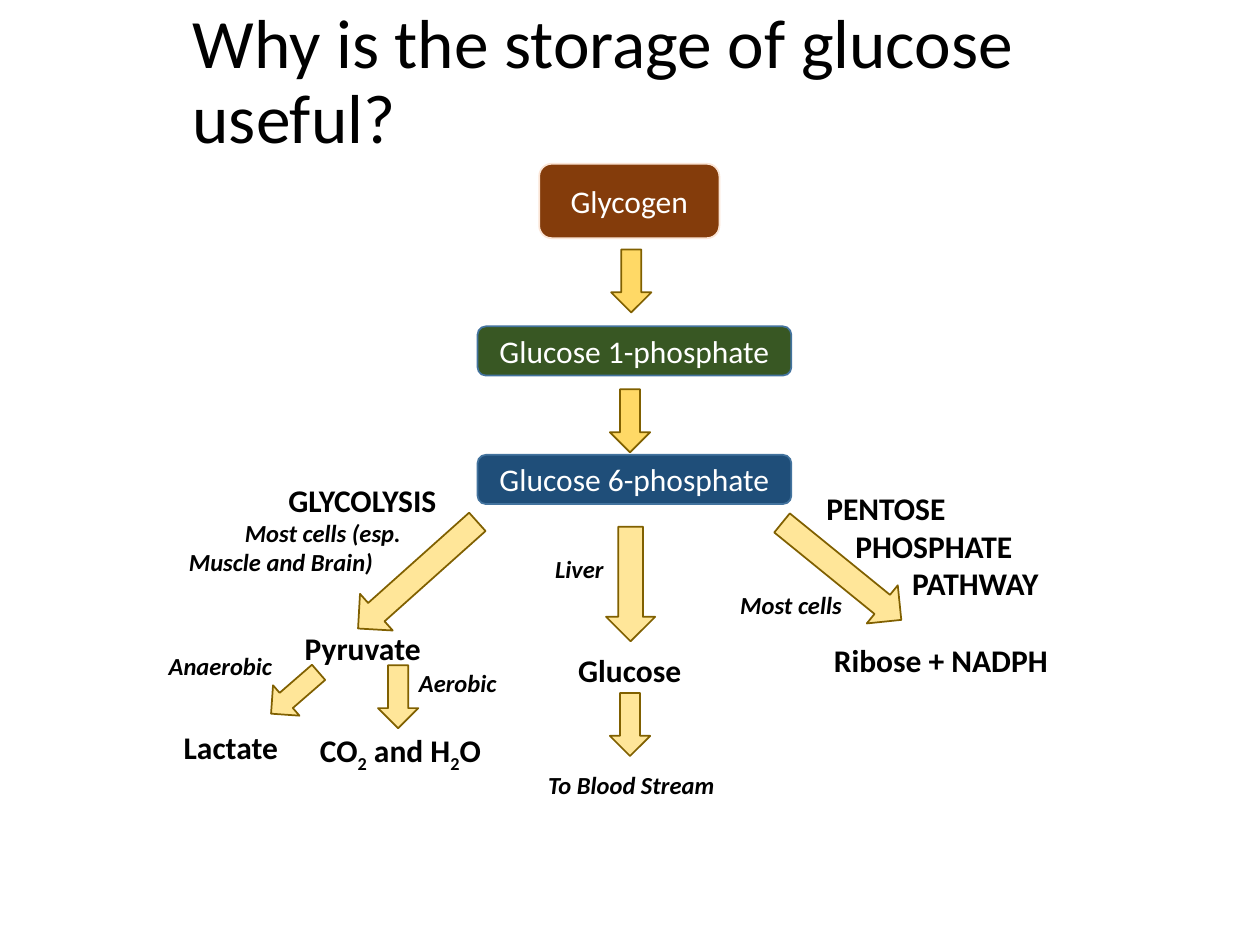
from pptx import Presentation
from pptx.dml.color import RGBColor
from pptx.enum.shapes import MSO_SHAPE
from pptx.enum.text import MSO_ANCHOR, MSO_AUTO_SIZE, PP_ALIGN
from pptx.util import Inches, Pt

COLORS = {
    "black": "000000", "white": "FFFFFF",
    "brown": "843C0B", "peach": "FBE5D6",
    "green": "385723", "navy": "1F4E79", "steel": "43739E",
    "gold": "FFD966", "light gold": "FFE699", "olive": "806000",
}
TITLE = {"name": "Calibri", "size": Pt(39.6)}
BOX = {"name": "Calibri", "size": Pt(18)}
MOLECULE = {"name": "Calibri", "size": Pt(18), "bold": True}
CONDITION = {"name": "Calibri", "size": Pt(14), "bold": True, "italic": True}

# text, left, top, width, height, fill, line
BOXES = [
    ("Glycogen", 4.28, 1.3, 1.43, 0.59, "brown", "peach"),
    ("Glucose 1-phosphate", 3.79, 2.59, 2.49, 0.39, "green", "steel"),
    ("Glucose 6-phosphate", 3.79, 3.61, 2.49, 0.39, "navy", "steel"),
]
# left, top, length, thickness, rotation, fill
ARROWS = [
    (4.76, 2.07, 0.5, 0.32, 270, "gold"),
    (4.75, 3.18, 0.5, 0.32, 270, "gold"),
    (2.68, 4.37, 1.27, 0.39, 318.2, "light gold"),
    (4.55, 4.44, 0.91, 0.39, 270, "light gold"),
    (6.07, 4.34, 1.22, 0.39, 219.1, "light gold"),
    (2.09, 5.34, 0.5, 0.32, 319, "light gold"),
    (2.91, 5.37, 0.5, 0.32, 270, "light gold"),
    (4.75, 5.59, 0.5, 0.32, 270, "light gold"),
]
# text, left, top, width
MOLECULES = [
    ("GLYCOLYSIS", 2.19, 3.77, 1.39),
    ("Pyruvate", 2.32, 4.94, 1.13),
    ("Lactate", 1.36, 5.73, 0.96),
    ("Ribose + NADPH", 6.52, 5.04, 1.92),
    ("Glucose", 4.49, 5.12, 1.02),
]
CONDITIONS = [
    ("Liver", 4.3, 4.35, 0.59),
    ("Aerobic", 3.22, 5.25, 0.82),
    ("Anaerobic", 1.23, 5.12, 1.03),
    ("Most cells", 5.76, 4.63, 1.02),
    ("To Blood Stream", 4.24, 6.06, 1.53),
]


def color(name):
    return RGBColor.from_string(COLORS[name])


def add_run(paragraph, text, style, color_name="black"):
    run = paragraph.add_run()
    run.text = text
    for attribute, value in style.items():
        setattr(run.font, attribute, value)
    run.font.color.rgb = color(color_name)
    return run


def add_shape(slide, kind, bounds, fill, line):
    shape = slide.shapes.add_shape(kind, *map(Inches, bounds))
    shape.shadow.inherit = False
    shape.fill.solid()
    shape.fill.fore_color.rgb = color(fill)
    shape.line.color.rgb = color(line)
    shape.line.width = Pt(1)
    return shape


def add_box(slide, text, *bounds, fill, line):
    shape = add_shape(slide, MSO_SHAPE.FLOWCHART_ALTERNATE_PROCESS, bounds, fill, line)
    shape.text_frame.vertical_anchor = MSO_ANCHOR.MIDDLE
    paragraph = shape.text_frame.paragraphs[0]
    paragraph.alignment = PP_ALIGN.CENTER
    add_run(paragraph, text, BOX, "white")


def add_arrow(slide, *bounds, rotation, fill):
    arrow = add_shape(slide, MSO_SHAPE.LEFT_ARROW, bounds, fill, "olive")
    arrow.rotation = rotation


def add_label(slide, lines, bounds, style, alignment=PP_ALIGN.LEFT, wrap=False):
    """Add a text box with one paragraph per line and return its text frame."""
    frame = slide.shapes.add_textbox(*map(Inches, bounds)).text_frame
    frame.word_wrap = wrap
    frame.auto_size = MSO_AUTO_SIZE.SHAPE_TO_FIT_TEXT
    for index, line in enumerate(lines):
        paragraph = frame.add_paragraph() if index else frame.paragraphs[0]
        paragraph.alignment = alignment
        if line:
            add_run(paragraph, line, style)
    return frame


def indent(paragraph, side, inches):
    """Set the left (marL) or right (marR) margin of a paragraph."""
    paragraph._p.get_or_add_pPr().set(side, str(Inches(inches)))


def add_title(slide):
    frame = add_label(slide, ["Why is the storage of glucose useful?"],
                      (1.43, 0.24, 8.44, 0.85), TITLE, wrap=True)
    frame.auto_size = MSO_AUTO_SIZE.NONE
    frame.vertical_anchor = MSO_ANCHOR.MIDDLE
    frame.paragraphs[0].line_spacing = 0.9


def add_stepped_labels(slide):
    pathway = add_label(slide, ["PENTOSE", "PHOSPHATE", "PATHWAY"],
                        (6.46, 3.83, 1.91, 1.01), MOLECULE, wrap=True)
    for paragraph, inches in zip(pathway.paragraphs, (0, 0.23, 0.68)):
        indent(paragraph, "marL", inches)
    cells = add_label(slide, ["Most cells (esp.", "Muscle and Brain)"],
                      (1.39, 4.06, 1.89, 0.57), CONDITION, PP_ALIGN.RIGHT, wrap=True)
    indent(cells.paragraphs[1], "marR", 0.22)


def add_aerobic_products(slide):
    frame = add_label(slide, [""], (2.44, 5.75, 1.51, 0.4), MOLECULE)
    for text in ("CO", "2", " and H", "2", "O"):
        run = add_run(frame.paragraphs[0], text, MOLECULE)
        if text.isdigit():
            run._r.get_or_add_rPr().set("baseline", "-25000")


def main():
    presentation = Presentation()
    presentation.slide_width = Inches(10)
    presentation.slide_height = Inches(7.5)
    slide = presentation.slides.add_slide(presentation.slide_layouts[6])
    add_title(slide)
    for *box, fill, line in BOXES:
        add_box(slide, *box, fill=fill, line=line)
    for *bounds, rotation, fill in ARROWS:
        add_arrow(slide, *bounds, rotation=rotation, fill=fill)
    for text, *bounds in MOLECULES:
        add_label(slide, [text], (*bounds, 0.4), MOLECULE)
    for text, *bounds in CONDITIONS:
        add_label(slide, [text], (*bounds, 0.34), CONDITION, PP_ALIGN.RIGHT)
    add_stepped_labels(slide)
    add_aerobic_products(slide)
    presentation.save("out.pptx")


if __name__ == "__main__":
    main()
